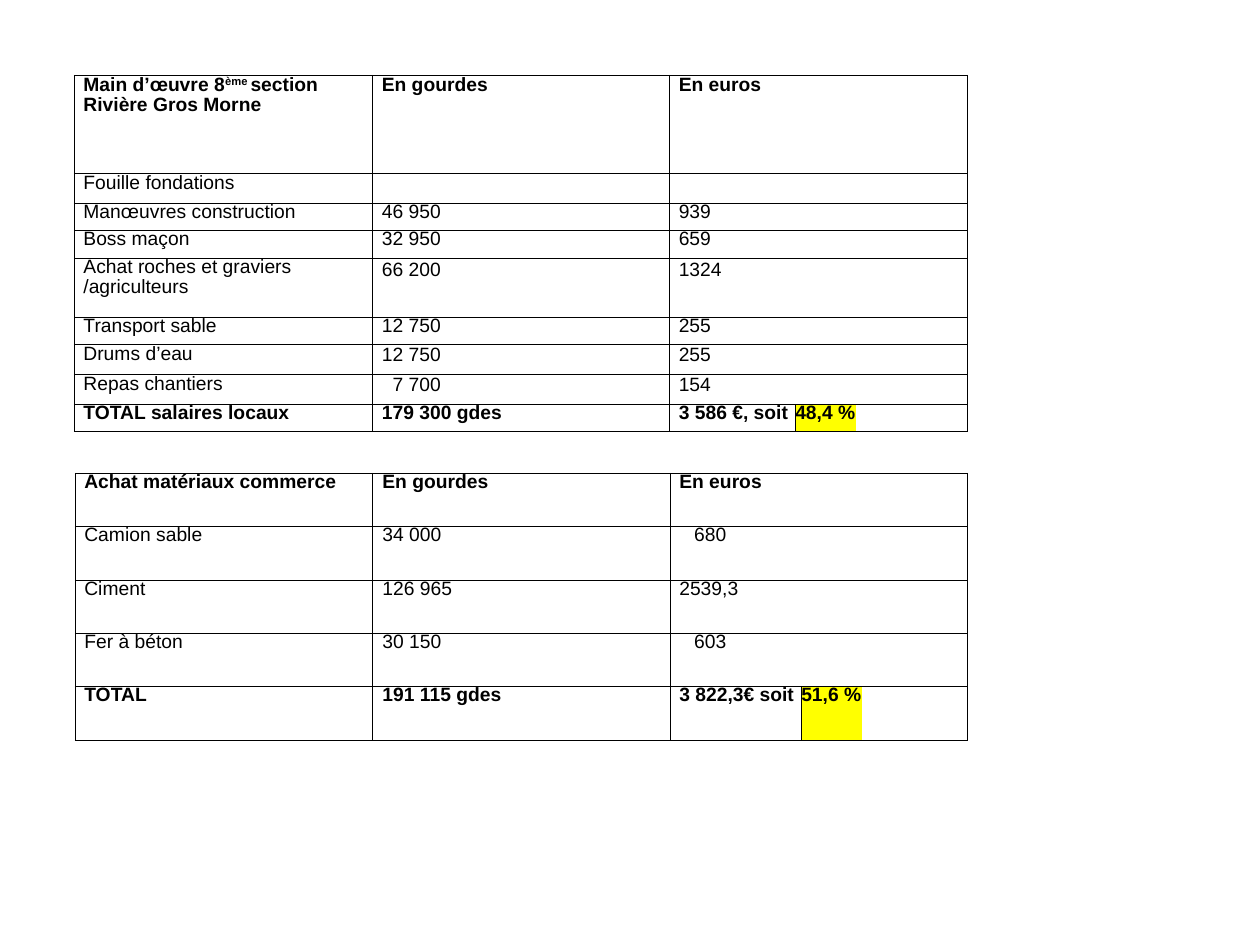
from dataclasses import dataclass

from lxml.etree import SubElement
from pptx import Presentation
from pptx.dml.color import RGBColor
from pptx.oxml.ns import qn
from pptx.util import Pt

BLACK = RGBColor(0, 0, 0)
YELLOW = RGBColor(255, 255, 0)
FONT = "Arial"
TEXT_SIZE = 11
BORDER_WIDTH = Pt(0.5)
LABEL_INDENT, GOURDES_INDENT, EUROS_INDENT = 5.2, 5.5, 5.2
ALL_SIDES = "LRTB"


@dataclass(frozen=True)
class Span:
    text: str
    raised: bool = False


@dataclass(frozen=True)
class Row:
    height: float
    label: list[list[Span]]
    gourdes: str
    euros: str
    share: str = ""
    bold: bool = False
    label_spacing: float = 11
    amount_spacing: float = 11
    gourdes_indent: float = GOURDES_INDENT
    euros_indent: float = EUROS_INDENT


@dataclass(frozen=True)
class CostTable:
    left: float
    top: float
    columns: list[float]
    rows: list[Row]


def lines(*texts: str) -> list[list[Span]]:
    """One paragraph of a single span for each text."""
    return [[Span(text)] for text in texts]


LABOUR_HEADING = [[Span("Main d’œuvre 8"), Span("ème ", raised=True),
                   Span("section Rivière Gros Morne")]]

LABOUR = CostTable(42.5, 43, [170.2, 170, 71.8, 34.6, 63.8], [
    Row(56.2, LABOUR_HEADING, "En gourdes", "En euros", bold=True,
        label_spacing=11.6, amount_spacing=11.6),
    Row(17.1, lines("Fouille fondations"), "", "", label_spacing=11.6),
    Row(15.6, lines("Manœuvres construction"), "46 950", "939"),
    Row(15.7, lines("Boss maçon"), "32 950", "659"),
    Row(33.8, lines("Achat roches et graviers", "/agriculteurs"), "66 200", "1324",
        label_spacing=11.2, amount_spacing=12.8),
    Row(15.6, lines("Transport sable"), "12 750", "255"),
    Row(17.1, lines("Drums d’eau"), "12 750", "255",
        label_spacing=11.6, amount_spacing=12.2),
    Row(17.2, lines("Repas chantiers"), "7 700", "154",
        label_spacing=11.6, amount_spacing=12.2, gourdes_indent=11.7),
    Row(15.6, lines("TOTAL salaires locaux"), "179 300 gdes", "3 586 €, soit",
        share="48,4 %", bold=True),
])

MATERIALS = CostTable(43, 270.5, [170, 170, 74.9, 34.6, 60.5], [
    Row(30.5, lines("Achat matériaux commerce"), "En gourdes", "En euros", bold=True),
    Row(30.5, lines("Camion sable"), "34 000", "680", euros_indent=13.7),
    Row(30.5, lines("Ciment"), "126 965", "2539,3"),
    Row(30.5, lines("Fer à béton"), "30 150", "603", euros_indent=13.7),
    Row(30.5, lines("TOTAL"), "191 115 gdes", "3 822,3€ soit",
        share="51,6 %", bold=True),
])


def set_borders(cell, sides: str) -> None:
    properties = cell._tc.get_or_add_tcPr()
    for side in ALL_SIDES:
        line = SubElement(properties, qn(f"a:ln{side}"), w=str(BORDER_WIDTH))
        if side in sides:
            fill = SubElement(line, qn("a:solidFill"))
            SubElement(fill, qn("a:srgbClr"), val=str(BLACK))
        else:
            SubElement(line, qn("a:noFill"))


def format_cell(cell, sides: str = ALL_SIDES) -> None:
    cell.margin_left = cell.margin_right = cell.margin_top = cell.margin_bottom = 0
    set_borders(cell, sides)
    cell.fill.background()


def write_cell(cell, paragraphs: list[list[Span]], indent: float,
               spacing: float, bold: bool) -> None:
    frame = cell.text_frame
    for index, spans in enumerate(paragraphs):
        para = frame.add_paragraph() if index else frame.paragraphs[0]
        para.line_spacing = Pt(spacing)
        para._p.get_or_add_pPr().set("marL", str(Pt(indent)))
        for item in spans:
            if not item.text:
                continue
            span = para.add_run()
            span.text = item.text
            font = span.font
            font.name, font.size, font.bold = FONT, Pt(TEXT_SIZE), bold
            font.color.rgb = BLACK
            if item.raised:
                font._element.set("baseline", "30000")
        # Keeps empty cells from stretching their row
        SubElement(para._p, qn("a:endParaRPr"), sz=str(TEXT_SIZE * 100))


def draw_row(table, index: int, row: Row) -> None:
    cells = [table.cell(index, column) for column in range(len(table.columns))]
    table.rows[index].height = Pt(row.height)
    sides = ["LRTB", "LRTB", "LTB", "LTB", "RTB"] if row.share else [ALL_SIDES] * 5
    for cell, cell_sides in zip(cells, sides):
        format_cell(cell, cell_sides)
    if row.share:
        cells[3].fill.solid()
        cells[3].fill.fore_color.rgb = YELLOW
    else:
        cells[2].merge(cells[4])

    write_cell(cells[0], row.label, LABEL_INDENT, row.label_spacing, row.bold)
    write_cell(cells[1], lines(row.gourdes), row.gourdes_indent,
               row.amount_spacing, row.bold)
    write_cell(cells[2], lines(row.euros), row.euros_indent,
               row.amount_spacing, row.bold)
    write_cell(cells[3], lines(row.share), 0, row.amount_spacing, row.bold)
    write_cell(cells[4], lines(""), 0, row.amount_spacing, row.bold)


def draw_table(page, costs: CostTable) -> None:
    height = sum(row.height for row in costs.rows)
    table = page.shapes.add_table(
        len(costs.rows), len(costs.columns), Pt(costs.left), Pt(costs.top),
        Pt(sum(costs.columns)), Pt(height)).table
    table.first_row = table.horz_banding = False
    for column, width in zip(table.columns, costs.columns):
        column.width = Pt(width)
    for index, row in enumerate(costs.rows):
        draw_row(table, index, row)


def main() -> None:
    deck = Presentation()
    deck.slide_width, deck.slide_height = Pt(720), Pt(540)
    page = deck.slides.add_slide(deck.slide_layouts[6])
    for costs in (LABOUR, MATERIALS):
        draw_table(page, costs)
    deck.save("out.pptx")


if __name__ == "__main__":
    main()
